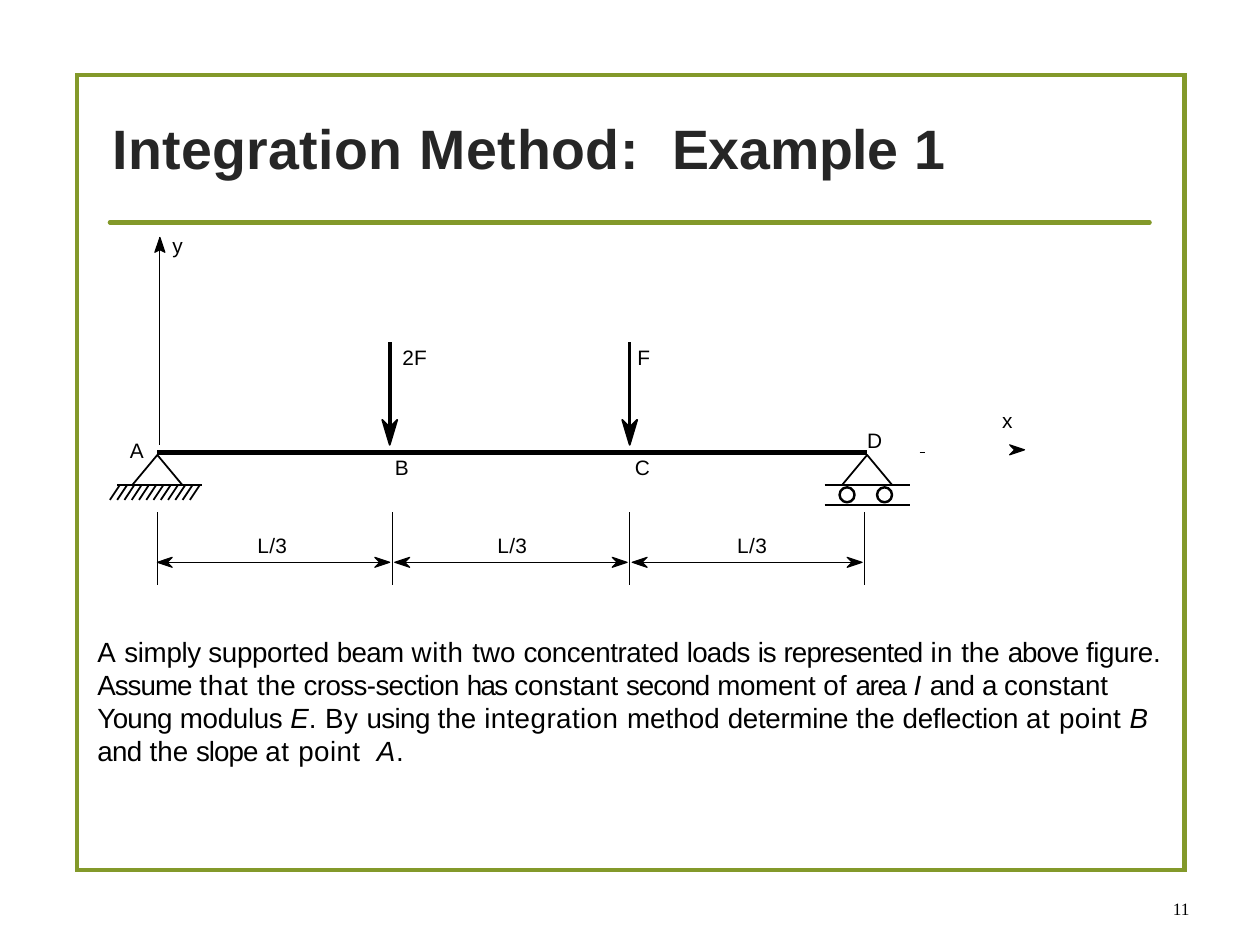
"""Build the slide "Integration Method: Example 1" with its beam diagram."""
from dataclasses import dataclass

from lxml.etree import SubElement
from pptx import Presentation
from pptx.dml.color import RGBColor
from pptx.enum.shapes import MSO_CONNECTOR as Connector, MSO_SHAPE as Preset
from pptx.enum.text import MSO_ANCHOR as Anchor, PP_ALIGN as Align
from pptx.oxml.ns import qn
from pptx.util import Inches, Pt


@dataclass(frozen=True)
class Theme:
    green: str = "83992A"
    heading: str = "262626"
    ink: str = "000000"
    sans: str = "Arial"
    serif: str = "Times New Roman"
    title_size: float = 16
    body_size: float = 8
    label_size: float = 6
    number_size: float = 5
    frame: float = 1.25
    beam: float = 1.62
    load: float = 0.97
    load_head: float = 0.5
    roller: float = 0.7
    support: float = 0.52
    thin: float = 0.32


THEME = Theme()

TITLE = [("Integration ", 0.15), ("Method:", 0.2), (" ", 4.85),
         ("Example ", -0.05), ("1", 0)]
BODY = [
    ("A ", 0.3), ("simply supported ", -0.1), ("beam ", -0.2), ("with ", 0.2),
    ("two ", 0), ("concentrated ", -0.15), ("loads ", -0.2), ("is ", -0.3),
    ("represented ", -0.25), ("in ", 0.1), ("the ", 0), ("above ", -0.3),
    ("figure. ", -0.15), ("Assume ", -0.3), ("that ", 0.2), ("the ", 0),
    ("cross-section ", -0.2), ("has ", -0.5), ("constant ", -0.05),
    ("second ", -0.3), ("moment ", -0.1), ("of ", 0.1), ("area ", -0.4),
    ("I ", 0.1, True), ("and ", -0.2), ("a ", -0.4), ("constant ", -0.05),
    ("Young ", -0.2), ("modulus ", -0.1), ("E", -0.3, True), (". By ", 0.1),
    ("using ", -0.2), ("the ", 0), ("integration ", 0.1), ("method ", 0),
    ("determine ", -0.1), ("the ", 0), ("deflection ", -0.1), ("at ", 0.2),
    ("point ", 0.1), ("B ", 0.3, True), ("and ", -0.2), ("the ", 0),
    ("slope ", -0.3), ("at ", 0.2), ("point", 0.1), (" ", 2.4),
    ("A", 0.2, True), (".", 0.2),
]
PAGE_NUMBER = "11"
LABELS = [
    ("A", 0.52, 1.75), ("B", 1.58, 1.82), ("C", 2.54, 1.82), ("D", 3.47, 1.71),
    ("2F", 1.61, 1.38), ("F", 2.55, 1.38), ("x", 4.01, 1.63), ("y", 0.69, 0.93),
    ("L/3", 1.03, 2.13), ("L/3", 1.99, 2.13), ("L/3", 2.95, 2.13),
]
STATIONS = [0.63, 1.57, 2.52, 3.46]
SPANS = [(0.63, 1.56), (1.58, 2.51), (2.53, 3.45)]
LOADS = [1.56, 2.52]
SUPPORTS = [0.53, 3.37]
ROLLERS = [3.36, 3.51]
BEAM_Y, GROUND_Y, RAIL_Y, SPAN_Y = 1.81, 1.94, 2.02, 2.25
HATCHES = 12

deck = Presentation()
deck.slide_width = Pt(363)
deck.slide_height = Pt(272.5)
page = deck.slides.add_slide(deck.slide_layouts[6])


def color(code):
    return RGBColor.from_string(code)


def add_text(spans, left, top, width, height, size=THEME.body_size,
             font=THEME.sans, ink=THEME.ink, bold=False, align=Align.LEFT,
             anchor=Anchor.TOP, leading=None, wrap=True):
    box = page.shapes.add_textbox(*map(Inches, (left, top, width, height)))
    frame = box.text_frame
    frame.margin_left = frame.margin_right = 0
    frame.margin_top = frame.margin_bottom = 0
    frame.word_wrap, frame.vertical_anchor = wrap, anchor
    para = frame.paragraphs[0]
    para.alignment = align
    if leading:
        para.line_spacing = Pt(leading)
    for words, spacing, *italic in spans:
        span = para.add_run()
        span.text = words
        span.font.name, span.font.size = font, Pt(size)
        span.font.bold, span.font.italic = bold, bool(italic)
        span.font.color.rgb = color(ink)
        span.font._element.set("spc", str(round(spacing * 100)))


def add_line(x1, y1, x2, y2, weight, ink=THEME.ink, cap="flat"):
    line = page.shapes.add_connector(Connector.STRAIGHT,
                                     *map(Inches, (x1, y1, x2, y2)))
    line.line.width, line.line.color.rgb = Pt(weight), color(ink)
    properties = line._element.spPr
    properties.find(qn("a:ln")).set("cap", cap)
    SubElement(properties, qn("a:effectLst"))


def finish(shape, weight, ink=THEME.ink, filled=False, sharp=False):
    shape.shadow.inherit = False
    if filled:
        shape.fill.solid()
        shape.fill.fore_color.rgb = color(ink)
    else:
        shape.fill.background()
    shape.line.width, shape.line.color.rgb = Pt(weight), color(ink)
    if sharp:
        stroke = shape._element.spPr.find(qn("a:ln"))
        SubElement(stroke, qn("a:miter"), lim="800000")


def add_outline(preset, left, top, width, height, weight, ink=THEME.ink,
                sharp=False):
    shape = page.shapes.add_shape(preset, *map(Inches, (left, top, width, height)))
    finish(shape, weight, ink, sharp=sharp)


def add_head(x, y, dx, dy, length=0.06, half=0.02, notch=0.04,
             weight=THEME.thin):
    offsets = [(0, 0), (length, half), (notch, 0), (length, -half)]
    points = [(Inches(x - dx * back - dy * side), Inches(y - dy * back + dx * side))
              for back, side in offsets]
    outline = page.shapes.build_freeform(*points[0])
    outline.add_line_segments(points[1:], close=True)
    finish(outline.convert_to_shape(), weight, filled=True)


def add_supports():
    for left in SUPPORTS:
        add_outline(Preset.ISOSCELES_TRIANGLE, left, 1.82, 0.2, 0.12, THEME.support)
    for left, y in [(0.47, GROUND_Y), (3.3, GROUND_Y), (3.3, RAIL_Y)]:
        add_line(left, y, left + 0.34, y, THEME.support)
    for index in range(HATCHES):
        x = 0.48 + index * 0.32 / (HATCHES - 1)
        add_line(x, GROUND_Y, x - 0.04, GROUND_Y + 0.06, THEME.support)
    for left in ROLLERS:
        add_outline(Preset.OVAL, left, 1.95, 0.06, 0.06, THEME.roller)


def add_dimensions():
    for x in STATIONS:
        add_line(x, 2.05, x, 2.34, THEME.thin)
    for start, end in SPANS:
        add_line(start, SPAN_Y, end, SPAN_Y, THEME.thin)
        add_head(start, SPAN_Y, -1, 0)
        add_head(end, SPAN_Y, 1, 0)


def add_beam():
    add_line(STATIONS[0], BEAM_Y, 3.47, BEAM_Y, THEME.beam)
    for x in LOADS:
        add_line(x, 1.37, x, 1.76, THEME.load)
        add_head(x, 1.78, 0, 1, 0.1, 0.03, 0.07, THEME.load_head)
    add_line(0.64, 1.78, 0.64, 0.95, THEME.thin)
    add_head(0.64, 0.95, 0, -1, notch=0.05)
    add_line(3.68, BEAM_Y, 3.7, BEAM_Y, THEME.thin)
    add_head(4.1, 1.8, 1, 0)


def main():
    add_outline(Preset.RECTANGLE, 0.31, 0.3, 4.43, 3.18, THEME.frame,
                THEME.green, sharp=True)
    add_line(0.44, 0.89, 4.6, 0.89, THEME.frame, THEME.green, cap="rnd")
    add_text(TITLE, 0.45, 0.23, 4.24, 0.72, size=THEME.title_size,
             ink=THEME.heading, bold=True, anchor=Anchor.MIDDLE)
    add_supports()
    add_dimensions()
    add_beam()
    for words, left, top in LABELS:
        add_text([(words, 0.1)], left, top, 0.15, 0.11,
                 size=THEME.label_size, wrap=False)
    add_text(BODY, 0.39, 2.54, 4.3, 0.56, leading=9.5)
    add_text([(PAGE_NUMBER, 0)], 4.52, 3.56, 0.24, 0.15, size=THEME.number_size,
             font=THEME.serif, align=Align.RIGHT, anchor=Anchor.MIDDLE)
    deck.save("out.pptx")


if __name__ == "__main__":
    main()
